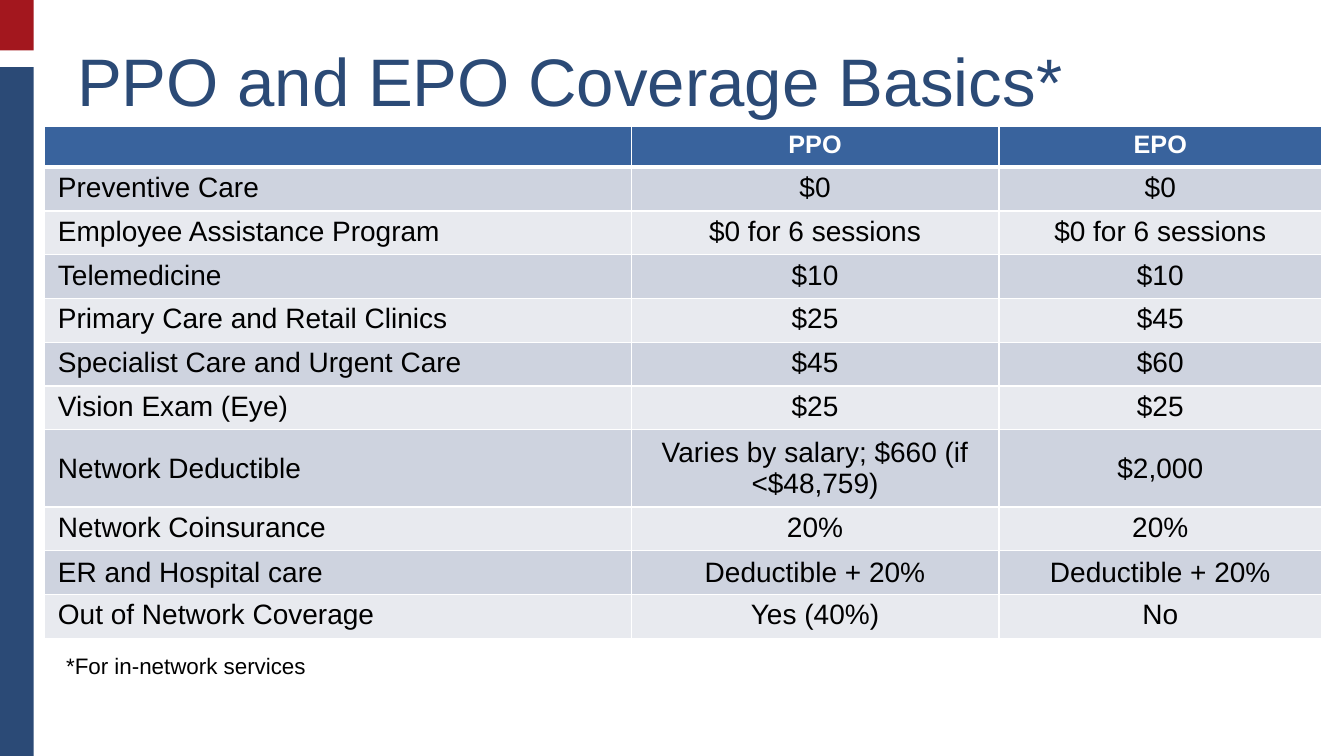
from lxml import etree
from pptx import Presentation
from pptx.dml.color import RGBColor
from pptx.enum.shapes import MSO_SHAPE
from pptx.enum.text import MSO_ANCHOR, PP_ALIGN
from pptx.oxml.ns import qn
from pptx.util import Pt

RECT = MSO_SHAPE.RECTANGLE
TOP, MID = MSO_ANCHOR.TOP, MSO_ANCHOR.MIDDLE
LEFT, CENTER = PP_ALIGN.LEFT, PP_ALIGN.CENTER

RED, NAVY, BLUE = "A3171E", "2B4A76", "39639D"
BANDS = ("CED3DF", "E8EAEF")
WHITE, BLACK = "FFFFFF", "000000"

WIDTHS = (419, 262.8, 230.4)
ROW = 29.5
ROWS = [
    ("", "PPO", "EPO"),
    ("Preventive Care", "$0", "$0"),
    ("Employee Assistance Program", "$0 for 6 sessions", "$0 for 6 sessions"),
    ("Telemedicine", "$10", "$10"),
    ("Primary Care and Retail Clinics", "$25", "$45"),
    ("Specialist Care and Urgent Care", "$45", "$60"),
    ("Vision Exam (Eye)", "$25", "$25"),
    ("Network Deductible", "Varies by salary; $660 (if <$48,759)", "$2,000"),
    ("Network Coinsurance", "20%", "20%"),
    ("ER and Hospital care", "Deductible + 20%", "Deductible + 20%"),
    ("Out of Network Coverage", "Yes (40%)", "No"),
]
CENTERED = ("Network Deductible", "ER and Hospital care")


def color(text):
    return RGBColor.from_string(text)


class Page:
    """Holds the font and the slide that is being filled."""

    def __init__(self, slide, font):
        self.slide = slide
        self.font = font

    def set_text(self, frame, text, size, tint, align=LEFT, bold=False):
        frame.text = text
        para = frame.paragraphs[0]
        para.alignment = align
        font = para.runs[0].font if para.runs else para.font
        font.name, font.size, font.bold = self.font, Pt(size), bold
        font.color.rgb = color(tint)

    def block(self, x, y, w, h, fill):
        shape = self.slide.shapes.add_shape(RECT, Pt(x), Pt(y), Pt(w), Pt(h))
        shape.shadow.inherit = False
        shape.fill.solid()
        shape.fill.fore_color.rgb = color(fill)
        shape.line.fill.background()

    def label(self, x, y, w, h, text, size, tint, anchor=TOP):
        box = self.slide.shapes.add_textbox(Pt(x), Pt(y), Pt(w), Pt(h))
        frame = box.text_frame
        frame.word_wrap = True
        frame.vertical_anchor = anchor
        self.set_text(frame, text, size, tint)

    def border(self, cell, top, bottom):
        """Draw white edges; top and bottom are widths in points."""
        props = cell._tc.get_or_add_tcPr()
        for side, width in (("L", 1), ("R", 1), ("T", top), ("B", bottom)):
            line = etree.SubElement(props, qn("a:ln" + side), w=str(Pt(width)))
            fill = etree.SubElement(line, qn("a:solidFill"))
            etree.SubElement(fill, qn("a:srgbClr"), val=WHITE)

    def cell(self, cell, text, row, col, anchor):
        head = row == 0
        self.border(cell, 3 if row == 1 else 1, 3 if head else 1)
        cell.fill.solid()
        cell.fill.fore_color.rgb = color(BLUE if head else BANDS[(row - 1) % 2])
        cell.margin_left = cell.margin_right = Pt(9.6)
        cell.margin_top = cell.margin_bottom = Pt(3.6)
        cell.vertical_anchor = anchor
        self.set_text(cell.text_frame, text, 18 if head else 20,
                      WHITE if head else BLACK, CENTER if col else LEFT, head)

    def table(self, x, y, widths, rows):
        table = self.slide.shapes.add_table(
            len(rows), len(widths), Pt(x), Pt(y),
            Pt(sum(widths)), Pt(ROW * len(rows))).table
        for col, width in zip(table.columns, widths):
            col.width = Pt(width)
        for r, texts in enumerate(rows):
            table.rows[r].height = Pt(ROW)
            anchor = MID if texts[0] in CENTERED else TOP
            for c, text in enumerate(texts):
                self.cell(table.cell(r, c), text, r, c, anchor)


def main():
    deck = Presentation()
    deck.slide_width, deck.slide_height = Pt(960), Pt(540)
    page = Page(deck.slides.add_slide(deck.slide_layouts[6]), "Arial")
    page.block(0, 0, 24, 36, RED)
    page.block(0, 48, 24, 492, NAVY)
    page.label(48, 18, 824.4, 78, "PPO and EPO Coverage Basics*", 48, NAVY, MID)
    page.table(31.8, 90, WIDTHS, ROWS)
    page.label(40.2, 462.4, 272, 26.6, "*For in-network services", 16, BLACK)
    deck.save("out.pptx")


if __name__ == "__main__":
    main()
